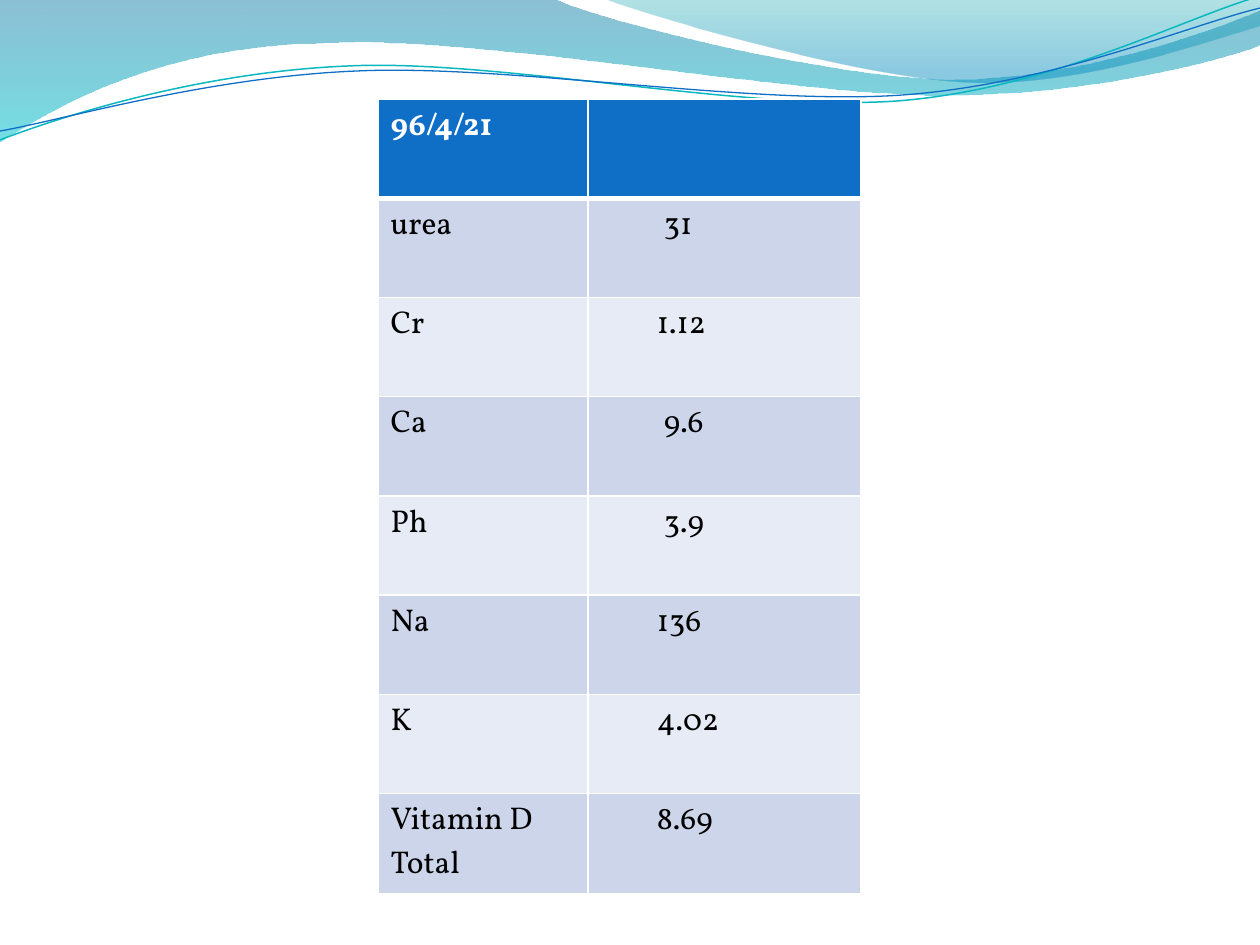
from math import cos, radians, sin

from lxml.etree import SubElement
from pptx import Presentation
from pptx.dml.color import RGBColor
from pptx.oxml.ns import qn
from pptx.util import Emu, Pt

PIXELS_PER_INCH = 126
FONT = "Vollkorn"
WHITE = RGBColor(0xFF, 0xFF, 0xFF)
BLACK = RGBColor(0, 0, 0)
BLUE = RGBColor(0x0F, 0x6F, 0xC6)
TEAL = RGBColor(0x0A, 0xB8, 0xBF)
BAND_DARK = RGBColor(0xCC, 0xD5, 0xEA)
BAND_LIGHT = RGBColor(0xE7, 0xEB, 0xF5)
WAVE_TOP = RGBColor(0x00, 0x74, 0xA1)
WAVE_BOTTOM = RGBColor(0x00, 0xC6, 0xCF)
CREST_TOP = RGBColor(0x00, 0xA1, 0xA9)
CREST_BOTTOM = RGBColor(0x00, 0x8B, 0xBF)


def px(length):
    return Emu(round(length * 914400 / PIXELS_PER_INCH))


def turn(point, center, degrees):
    angle = radians(degrees)
    x, y = point[0] - center[0], point[1] - center[1]
    return (center[0] + x * cos(angle) - y * sin(angle),
            center[1] + x * sin(angle) + y * cos(angle))


def write_text(frame, text, size=18, color=BLACK, bold=False):
    run = frame.paragraphs[0].add_run()
    run.text = text
    run.font.name = FONT
    run.font.size = Pt(size)
    run.font.bold = bold
    run.font.color.rgb = color


class SlideBuilder:
    def __init__(self, slide):
        self.slide = slide

    def outline(self, start, segments, close):
        points = [(px(x), px(y)) for segment in segments for x, y in segment]
        builder = self.slide.shapes.build_freeform(px(start[0]), px(start[1]), scale=1.0)
        builder.add_line_segments(points, close=close)
        shape = builder.convert_to_shape()
        shape.shadow.inherit = False
        lines = iter(list(shape.element.iter(qn("a:lnTo"))))
        for segment in segments:
            steps = [next(lines) for _ in segment]
            if len(steps) == 3:
                bezier = steps[0].makeelement(qn("a:cubicBezTo"))
                steps[0].addprevious(bezier)
                for step in steps:
                    bezier.append(step[0])
                    step.getparent().remove(step)
        return shape

    def area(self, start, segments, stops):
        shape = self.outline(start, segments, True)
        shape.line.fill.background()
        shape.fill.gradient()
        shape.fill.gradient_angle = 270
        for stop, (position, color, _) in zip(shape.fill.gradient_stops, stops):
            stop.position = position
            stop.color.rgb = color
        colors = shape.element.spPr.iter(qn("a:srgbClr"))
        for element, (_, _, opacity) in zip(colors, stops):
            SubElement(element, qn("a:alpha"), val=str(opacity * 1000))

    def curve(self, start, segments, color, width, center, tilt=2.7):
        level = [[turn(point, center, tilt) for point in segment] for segment in segments]
        shape = self.outline(turn(start, center, tilt), level, False)
        shape.rotation = 360 - tilt
        shape.fill.background()
        shape.line.color.rgb = color
        shape.line.width = Pt(width)

    def borders(self, cell, top, bottom):
        properties = cell._tc.get_or_add_tcPr()
        for side, width in (("L", 1), ("R", 1), ("T", top), ("B", bottom)):
            line = SubElement(properties, qn(f"a:ln{side}"), w=str(Pt(width)))
            fill = SubElement(line, qn("a:solidFill"))
            SubElement(fill, qn("a:srgbClr"), val=str(WHITE))

    def table(self, left, top, widths, height, rows):
        frame = self.slide.shapes.add_table(
            len(rows), len(widths), px(left), px(top), px(sum(widths)), px(height))
        table = frame.table
        table.horz_banding = False
        for column, width in zip(table.columns, widths):
            column.width = px(width)
        for index, (name, value, indent) in enumerate(rows):
            table.rows[index].height = px(height / len(rows))
            header = index == 0
            band = BAND_DARK if index % 2 else BAND_LIGHT
            for column, text in enumerate((name, value)):
                cell = table.cell(index, column)
                self.borders(cell, 3 if index == 1 else 1, 3 if header else 1)
                cell.fill.solid()
                cell.fill.fore_color.rgb = BLUE if header else band
                if column:
                    cell.margin_left = px(indent)
                if text:
                    write_text(cell.text_frame, text,
                               color=WHITE if header else BLACK, bold=header)


presentation = Presentation()
presentation.slide_width = px(1260)
presentation.slide_height = px(945)
builder = SlideBuilder(presentation.slides.add_slide(presentation.slide_layouts[6]))

builder.area((0, 0), [
    ((554, -1),),
    ((600, 21), (837, 79), (955, 79)),
    ((1075, 79), (1207, 33), (1260, 11)),
    ((1261, 45),),
    ((1239, 55), (1096, 96), (940, 95)),
    ((784, 95), (481, 35), (324, 43)),
    ((163, 45), (58, 105), (-1, 142)),
], [(0, WAVE_TOP, 45), (1, WAVE_BOTTOM, 55)])
builder.area((604, -1), [
    ((641, 14), (859, 78), (969, 82)),
    ((1079, 87), (1211, 40), (1260, 26)),
    ((1260, 0),),
], [(0, CREST_TOP, 30), (0.8, CREST_BOTTOM, 45)])
builder.curve((0, 140), [
    ((60, 117), (199, 72), (349, 66)),
    ((498, 59), (747, 112), (898, 101)),
    ((1050, 89), (1182, 19), (1257, -3)),
], TEAL, 0.85, (629, 72))
builder.curve((0, 131), [
    ((59, 121), (207, 77), (357, 71)),
    ((508, 64), (752, 106), (903, 95)),
    ((1053, 84), (1186, 26), (1260, 8)),
], BLUE, 0.75, (629, 74))

NEAR, FAR = 69, 76
builder.table(378, 99, (210, 273), 794, [
    ("96/4/21", "", NEAR),
    ("urea", "31", FAR),
    ("Cr", "1.12", NEAR),
    ("Ca", "9.6", FAR),
    ("Ph", "3.9", FAR),
    ("Na", "136", NEAR),
    ("K", "4.02", NEAR),
    ("Vitamin D Total", "8.69", NEAR),
])

presentation.save("out.pptx")
